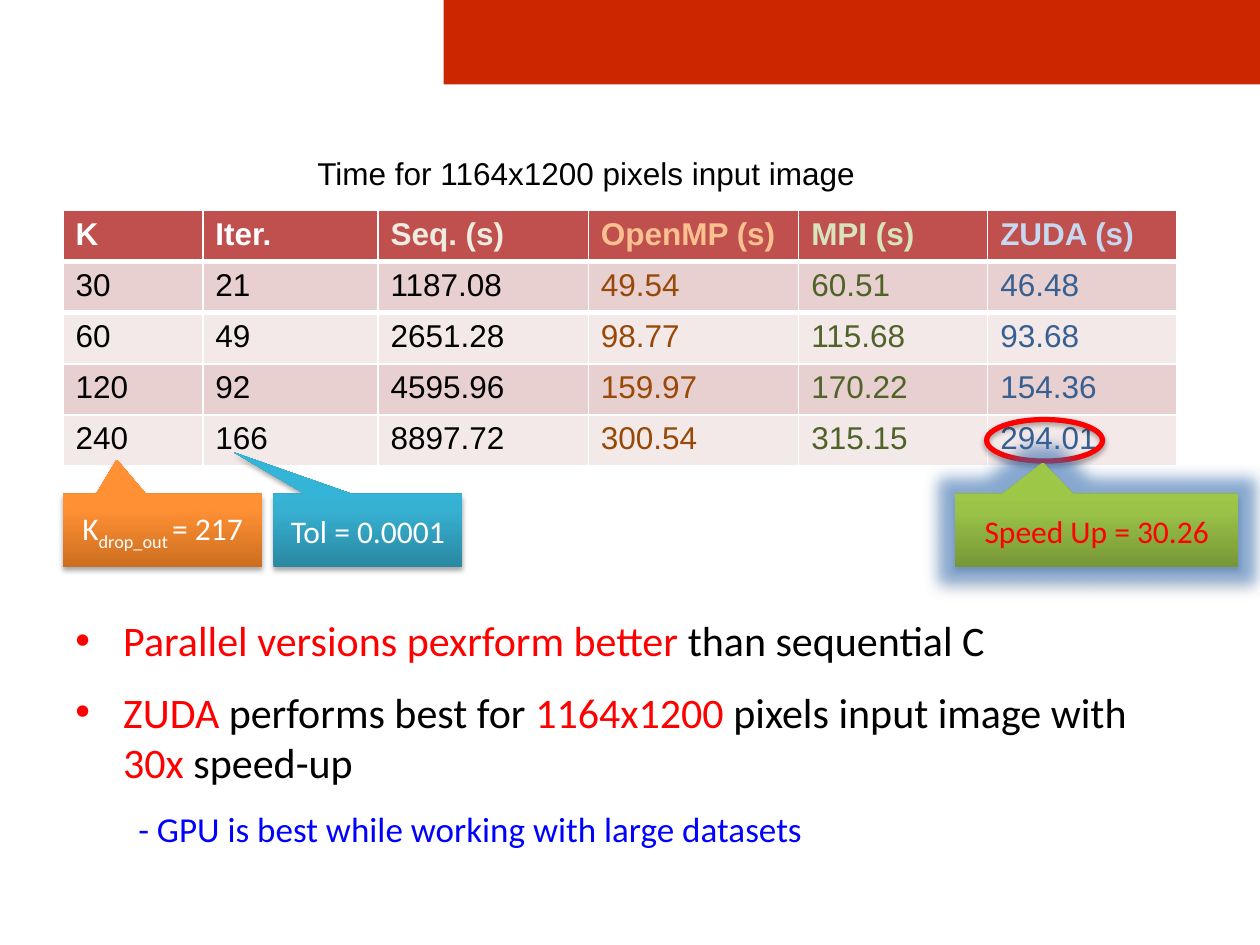
from dataclasses import dataclass
from typing import Any, NamedTuple

from lxml.etree import SubElement
from pptx import Presentation
from pptx.dml.color import RGBColor
from pptx.enum.shapes import MSO_SHAPE
from pptx.enum.text import MSO_ANCHOR, MSO_AUTO_SIZE, PP_ALIGN
from pptx.oxml import parse_xml
from pptx.oxml.ns import nsdecls, qn
from pptx.util import Inches, Pt

RED, BLACK, WHITE, BLUE = "FF0000", "000000", "FFFFFF", "0000FF"
BRICK = "CA2600"


class Run(NamedTuple):
    """A piece of text in one colour."""
    text: str
    color: str = BLACK
    base: int = 0


class Box(NamedTuple):
    """A place on the slide, in inches."""
    left: float
    top: float
    width: float
    height: float


@dataclass
class Callout:
    """A pointed label with a shaded fill."""
    box: Box
    tip: tuple[float, float]
    stops: tuple[str, str, str]
    runs: list[Run]
    glow: bool = False


@dataclass
class Point:
    """A paragraph of the closing list."""
    runs: list[Run]
    size: int = 24
    level: int = 0
    margin: float = 0.38
    bullet: bool = True


@dataclass
class Column:
    """A table column with its header and body colours."""
    width: float
    head: str
    tint: str
    ink: str
    values: list[str]


BARS = [Box(3.52, 0, 6.48, 0.67), Box(3.56, 0, 6.44, 0.62)]

COLUMNS = [
    Column(1.11, "K", WHITE, BLACK, ["30", "60", "120", "240"]),
    Column(1.39, "Iter.", WHITE, BLACK, ["21", "49", "92", "166"]),
    Column(1.67, "Seq. (s)", "EEECE1", BLACK, ["1187.08", "2651.28", "4595.96", "8897.72"]),
    Column(1.67, "OpenMP (s)", "FAC090", "984807", ["49.54", "98.77", "159.97", "300.54"]),
    Column(1.5, "MPI (s)", "D7E4BD", "4F6228", ["60.51", "115.68", "170.22", "315.15"]),
    Column(1.5, "ZUDA (s)", "C6D9F1", "376092", ["46.48", "93.68", "154.36", "294.01"]),
]

CALLOUTS = [
    Callout(Box(0.5, 3.92, 1.58, 0.58), (-0.23, -0.97), ("CC6E20", "FF9034", "FF9136"),
            [Run("K", WHITE), Run("drop_out ", WHITE, -25000), Run("= 217", WHITE)]),
    Callout(Box(2.17, 3.92, 1.5, 0.58), (-0.71, -1.07), ("2A88A2", "37B1D2", "34B4D6"),
            [Run("Tol = 0.0001", WHITE)]),
    Callout(Box(7.58, 3.92, 2.25, 0.58), (-0.19, -0.93), ("779737", "9BC348", "9DC746"),
            [Run("Speed Up = 30.26", RED)], glow=True),
]

POINTS = [
    Point([Run("Parallel versions pexrform better ", RED), Run("than sequential C")]),
    Point([Run("ZUDA ", RED), Run("performs best for "), Run("1164x1200", RED),
           Run(" pixels input image with "), Run("30x", RED), Run(" speed-up")]),
    Point([Run("- GPU is best while working with large datasets", BLUE)],
          size=20, level=1, margin=0.5, bullet=False),
]


def paint(target: Any, color: str) -> None:
    """Give a colour format a hex colour."""
    target.rgb = RGBColor.from_string(color)


def fill(item: Any, color: str) -> None:
    """Fill a shape or cell with one colour."""
    item.fill.solid()
    paint(item.fill.fore_color, color)


def write(para: Any, runs: list[Run], **form: Any) -> None:
    """Add runs to a paragraph with shared font values."""
    for part in runs:
        run = para.add_run()
        run.text = part.text
        for name, value in form.items():
            setattr(run.font, name, value)
        paint(run.font.color, part.color)
        if part.base:
            run._r.get_or_add_rPr().set("baseline", str(part.base))


def add_shape(slide: Any, kind: Any, box: Box) -> Any:
    """Add a preset shape without shadow or outline."""
    shape = slide.shapes.add_shape(kind, *map(Inches, box))
    shape.shadow.inherit = False
    shape.line.fill.background()
    return shape


def add_effect(shape: Any, glow: bool = False) -> None:
    """Give a shape a soft drop shadow and, if asked, a blue glow."""
    effects = shape._element.spPr.find(qn("a:effectLst"))
    layers = [("a:outerShdw", BLACK, 35000, {"blurRad": Pt(3.1), "dist": Pt(1.8),
                                             "dir": 5400000, "rotWithShape": 0})]
    if glow:
        layers.insert(0, ("a:glow", "3A7CCB", 50000, {"rad": Pt(18)}))
    for tag, color, alpha, form in layers:
        layer = SubElement(effects, qn(tag), {key: str(int(val)) for key, val in form.items()})
        tone = SubElement(layer, qn("a:srgbClr"), val=color)
        SubElement(tone, qn("a:alpha"), val=str(alpha))


def shade(shape: Any, stops: tuple[str, str, str]) -> None:
    """Fill a shape with a gradient that rises from the bottom."""
    shape.fill.background()
    marks = "".join(f'<a:gs pos="{pos}"><a:srgbClr val="{color}"/></a:gs>'
                    for pos, color in zip((0, 80000, 100000), stops))
    blend = parse_xml(f'<a:gradFill {nsdecls("a")} rotWithShape="1"><a:gsLst>{marks}</a:gsLst>'
                      '<a:lin ang="16200000" scaled="0"/></a:gradFill>')
    props = shape._element.spPr
    props.replace(props.find(qn("a:noFill")), blend)


def add_callout(slide: Any, item: Callout) -> None:
    """Draw a pointed label."""
    shape = add_shape(slide, MSO_SHAPE.RECTANGULAR_CALLOUT, item.box)
    shape.adjustments[0], shape.adjustments[1] = item.tip
    shade(shape, item.stops)
    add_effect(shape, item.glow)
    frame = shape.text_frame
    frame.vertical_anchor = MSO_ANCHOR.MIDDLE
    frame.paragraphs[0].alignment = PP_ALIGN.CENTER
    write(frame.paragraphs[0], item.runs, name="Calibri", size=Pt(18))


def edge(cell: Any, side: str, width: float) -> None:
    """Draw a white border on one side of a cell."""
    line = parse_xml(f'<a:{side} {nsdecls("a")} w="{Pt(width)}"><a:solidFill>'
                     f'<a:srgbClr val="{WHITE}"/></a:solidFill></a:{side}>')
    cell._tc.get_or_add_tcPr().insert(0, line)


def add_table(slide: Any, box: Box, columns: list[Column]) -> None:
    """Draw the timing table."""
    count = len(columns[0].values) + 1
    table = slide.shapes.add_table(count, len(columns), *map(Inches, box)).table
    for col, item in enumerate(columns):
        table.columns[col].width = Inches(item.width)
        for row, text in enumerate([item.head, *item.values]):
            cell = table.cell(row, col)
            fill(cell, "F4E9E9" if row % 2 == 0 else "E8D0D0")
            if row == 0:
                fill(cell, "C0504D")
            if row < 2:
                edge(cell, "lnT" if row else "lnB", 3)
            write(cell.text_frame.paragraphs[0], [Run(text, item.ink if row else item.tint)],
                  name="Arial", size=Pt(18), bold=row == 0)


def add_text(slide: Any, box: Box, wrap: bool) -> Any:
    """Add a text box that grows with its text."""
    frame = slide.shapes.add_textbox(*map(Inches, box)).text_frame
    frame.word_wrap = wrap
    frame.auto_size = MSO_AUTO_SIZE.SHAPE_TO_FIT_TEXT
    return frame


def add_points(slide: Any, box: Box, points: list[Point]) -> None:
    """Write the closing list."""
    frame = add_text(slide, box, True)
    for index, item in enumerate(points):
        para = frame.add_paragraph() if index else frame.paragraphs[0]
        para.level = item.level
        para.space_after = Pt(12)
        props = para._p.get_or_add_pPr()
        props.set("marL", str(Inches(item.margin)))
        props.set("indent", str(-Inches(item.margin) if item.bullet else 0))
        if item.bullet:
            SubElement(props, qn("a:buFont"), typeface="Arial")
            SubElement(props, qn("a:buChar"), char="•")
        write(para, item.runs, name="Calibri", size=Pt(item.size))


def main() -> None:
    """Build and save the slide."""
    deck = Presentation()
    deck.slide_width, deck.slide_height = Inches(10), Inches(7.5)
    slide = deck.slides.add_slide(deck.slide_layouts[6])
    for box in BARS:
        fill(add_shape(slide, MSO_SHAPE.RECTANGLE, box), BRICK)
    add_points(slide, Box(0.5, 4.83, 8.83, 1.99), POINTS)
    add_table(slide, Box(0.5, 1.67, 8.83, 2.03), COLUMNS)
    ring = add_shape(slide, MSO_SHAPE.OVAL, Box(7.83, 3.33, 0.92, 0.33))
    ring.fill.background()
    ring.line.width = Pt(3)
    fill(ring.line, RED)
    add_effect(ring)
    title = add_text(slide, Box(2.42, 1.17, 4.51, 0.4), False)
    write(title.paragraphs[0], [Run("Time for 1164x1200 pixels input image")],
          name="Arial", size=Pt(18))
    for item in CALLOUTS:
        add_callout(slide, item)
    deck.save("out.pptx")


if __name__ == "__main__":
    main()
